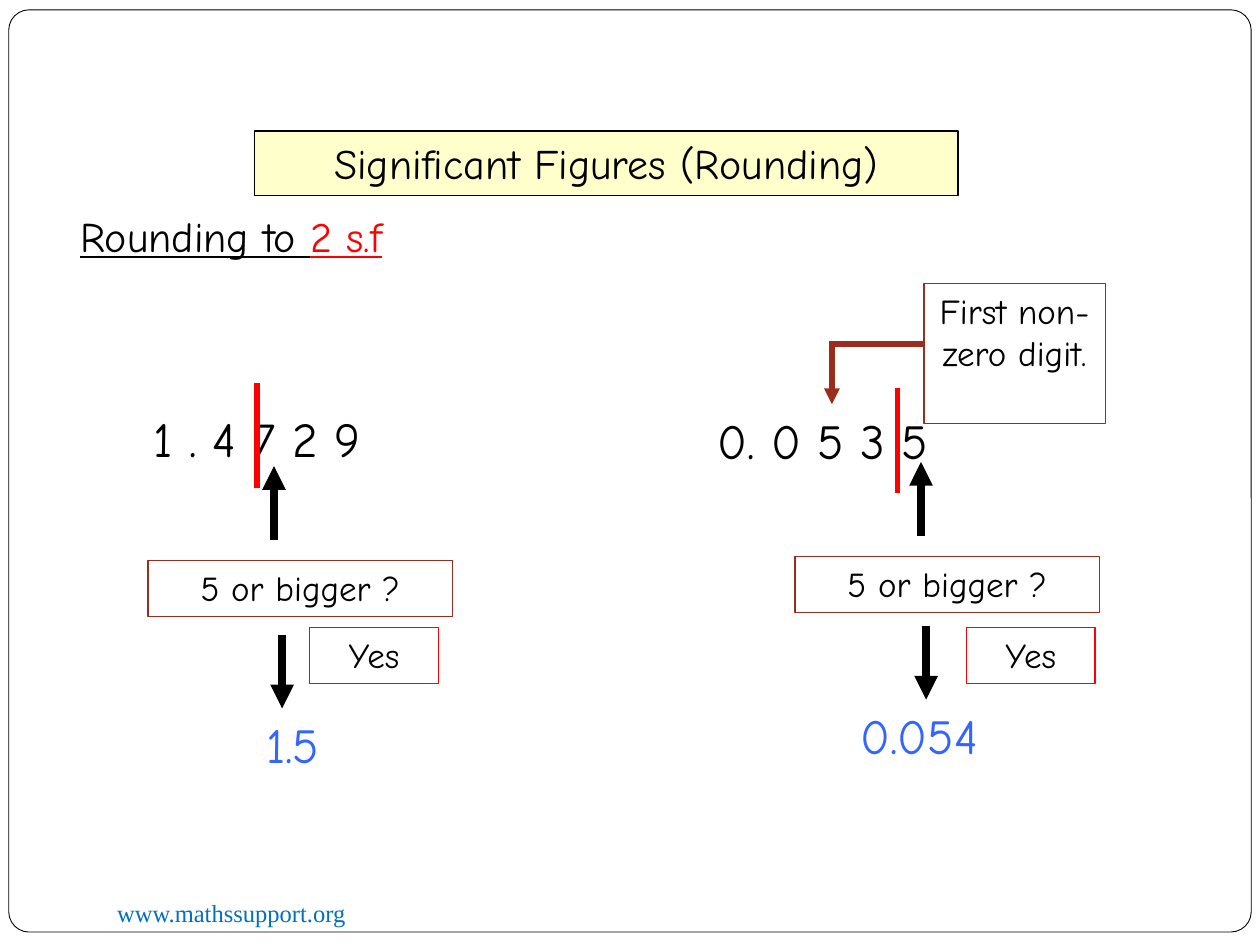
from lxml import etree
from pptx import Presentation
from pptx.dml.color import RGBColor
from pptx.enum import shapes, text
from pptx.oxml import ns
from pptx.util import Pt

FONT = "Comic Neue"
BLACK, WHITE, RED, BROWN = "000000", "FFFFFF", "FF0000", "9B2D1F"
BLUE, LINK_BLUE, CREAM = "3366FF", "0070C0", "FFFFCC"


def colour(hex_code):
    """Return the colour for a hex string."""
    return RGBColor.from_string(hex_code)


def write(box, words, size, hex_code=BLACK, centred=False, font=FONT):
    """Put one formatted paragraph into a shape and return it."""
    frame = box.text_frame
    frame.word_wrap = True
    frame.auto_size = text.MSO_AUTO_SIZE.NONE
    frame.vertical_anchor = text.MSO_ANCHOR.TOP
    para = frame.paragraphs[0]
    para.text = words
    para.alignment = text.PP_ALIGN.CENTER if centred else text.PP_ALIGN.LEFT
    para.font.name = font
    para.font.size = Pt(size)
    para.font.color.rgb = colour(hex_code)
    return para


def add_label(page, place, words, size, hex_code=BLACK, font=FONT):
    """Add plain text at a left, top, width, height place."""
    box = page.shapes.add_textbox(*map(Pt, place))
    return write(box, words, size, hex_code, font=font)


def outline(box, hex_code, width=0.75, fill=None):
    """Give a shape its border and an optional fill."""
    if fill:
        box.fill.solid()
        box.fill.fore_color.rgb = colour(fill)
    else:
        box.fill.background()
    box.line.color.rgb = colour(hex_code)
    box.line.width = Pt(width)


def add_box(page, place, words, border):
    """Add an outlined rectangle with centred text."""
    box = page.shapes.add_shape(shapes.MSO_SHAPE.RECTANGLE, *map(Pt, place))
    box.shadow.inherit = False
    outline(box, border)
    write(box, words, 20, centred=True)


def add_line(page, start, end, hex_code, width, arrow=False):
    """Add a straight line, with an arrowhead at its end if wanted."""
    line = page.shapes.add_connector(
        shapes.MSO_CONNECTOR.STRAIGHT, *map(Pt, start + end))
    line.line.color.rgb = colour(hex_code)
    line.line.width = Pt(width)
    if arrow:
        etree.SubElement(line.get_or_add_ln(), ns.qn("a:tailEnd"), type="triangle")
    etree.SubElement(line.element.spPr, ns.qn("a:effectLst"))


def add_frame(page):
    """Add the rounded border around the page."""
    frame = page.shapes.add_shape(
        shapes.MSO_SHAPE.ROUNDED_RECTANGLE, Pt(5), Pt(5.6), Pt(710), Pt(527))
    frame.adjustments[0] = 0.022
    frame.shadow.inherit = False
    outline(frame, BLACK, 0.5, WHITE)


def add_title(page, words):
    """Place the title in its cream box, in front of the frame."""
    title = page.shapes.title
    title.left, title.top, title.width, title.height = map(Pt, (145.4, 74.9, 402, 36.7))
    outline(title, BLACK, fill=CREAM)
    write(title, words, 24, centred=True)
    title.element.getparent().append(title.element)


def add_heading(page):
    """Add the underlined heading with its red ending."""
    para = add_label(page, (38.9, 116.6, 210, 36), "Rounding to ", 24)
    para.font.underline = True
    span = para.add_run()
    span.text = "2 s.f"
    span.font.color.rgb = colour(RED)


def add_number(page, place, words, cut_x, cut_top):
    """Add a number and the red line that cuts it."""
    add_label(page, place, words, 28)
    add_line(page, (cut_x, cut_top), (cut_x, cut_top + 60), RED, 3)


def add_question(page, left, top):
    """Add the question box and the arrow up to the deciding digit."""
    add_box(page, (left, top, 174, 32), "5 or bigger ?", BROWN)
    add_line(page, (left + 72, top - 12), (left + 72, top - 54), BLACK, 4.5, True)


def add_answer(page, arrow_x, top, answer_left, answer, yes_left):
    """Add the yes box, the arrow down and the rounded answer."""
    add_box(page, (yes_left, 358.5, 73.5, 32), "Yes", RED)
    add_line(page, (arrow_x, top), (arrow_x, top + 42), BLACK, 4.5, True)
    add_label(page, (answer_left, top + 42, 96, 41), answer, 28, BLUE)


def add_callout(page):
    """Add the note on the first digit with its bent arrow."""
    add_line(page, (475.4, 195), (475.4, 231), BROWN, 3, True)
    add_line(page, (474.2, 196.5), (528.3, 196.5), BROWN, 3)
    add_box(page, (528, 162, 103.6, 80), "First non-zero digit.", BROWN)


def main():
    """Build the slide and save it."""
    deck = Presentation()
    deck.slide_width, deck.slide_height = Pt(720), Pt(540)
    page = deck.slides.add_slide(deck.slide_layouts[5])
    add_frame(page)
    add_title(page, "Significant Figures (Rounding)")
    add_label(page, (59.8, 509.8, 234, 24.5), "www.mathssupport.org", 14,
              LINK_BLUE, "Times New Roman")
    add_heading(page)
    add_number(page, (80.6, 229.7, 174, 41), "1 . 4 7 2 9", 146.9, 218.9)
    add_question(page, 84.6, 320.4)
    add_answer(page, 161.2, 362.8, 145, "1.5", 177)
    add_number(page, (403.2, 231.1, 180, 41), "0. 0 5 3 5", 512.8, 222)
    add_question(page, 454.3, 318)
    add_answer(page, 529.2, 357.8, 484.6, "0.054", 552.3)
    add_callout(page)
    deck.save("out.pptx")


if __name__ == "__main__":
    main()
